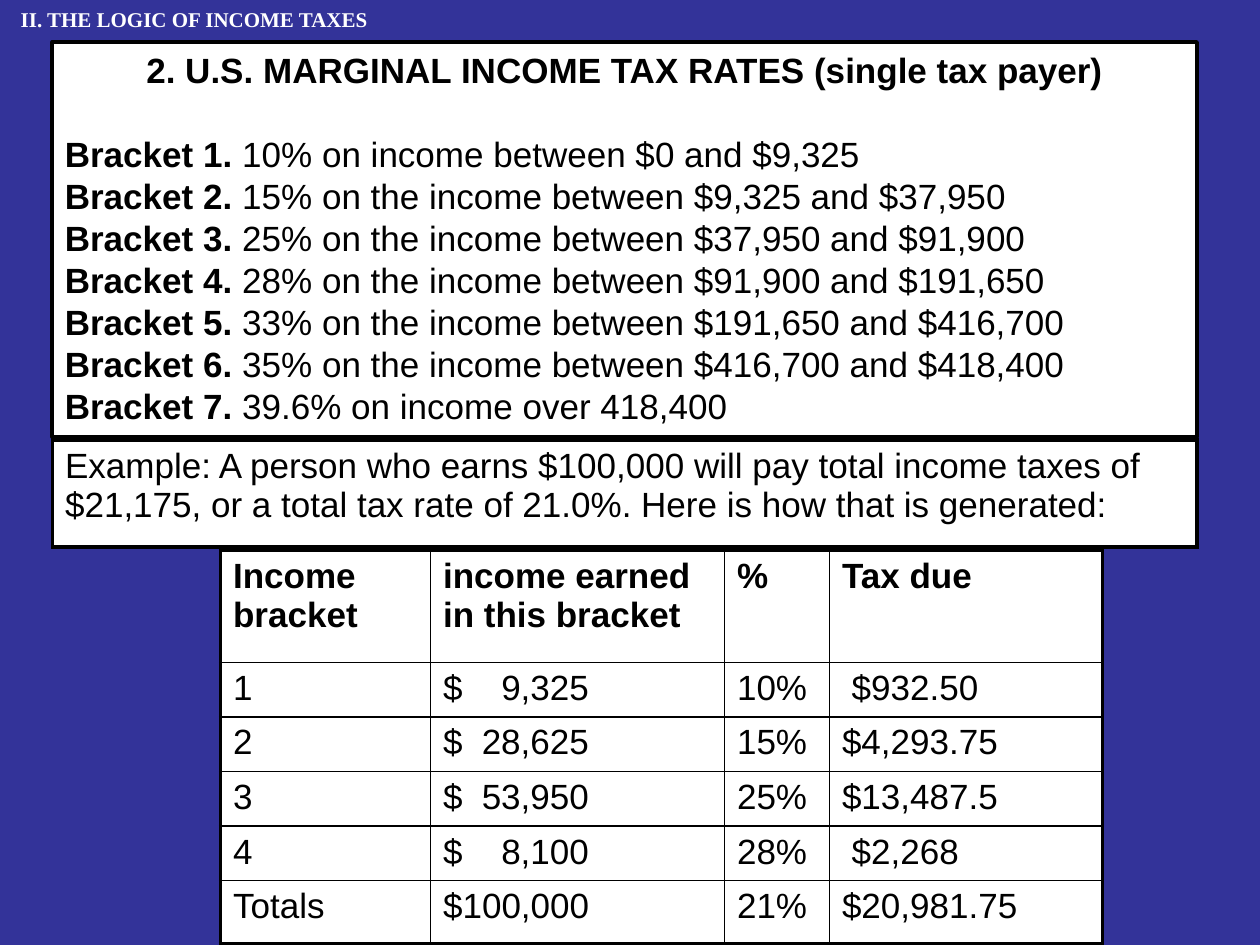
from dataclasses import dataclass
from lxml import etree
from pptx import Presentation
from pptx.dml.color import RGBColor
from pptx.enum.shapes import MSO_SHAPE
from pptx.enum.text import MSO_ANCHOR, PP_ALIGN
from pptx.oxml.ns import qn
from pptx.util import Pt

RECT = MSO_SHAPE.RECTANGLE
TOP = MSO_ANCHOR.TOP
LEFT, CENTER = PP_ALIGN.LEFT, PP_ALIGN.CENTER


@dataclass(frozen=True)
class Theme:
    back: str = "333399"
    paper: str = "FFFFFF"
    ink: str = "000000"
    sans: str = "Arial"
    serif: str = "Times New Roman"
    body: float = 20
    small: float = 12
    thick: float = 2.25
    thin: float = 1


THEME = Theme()


def rgb(code):
    return RGBColor.from_string(code)


def write(frame, lines, size=THEME.body, font=THEME.sans, color=THEME.ink,
          bold=False, align=LEFT, pitch=None, tab=None):
    frame.word_wrap = True
    for i, line in enumerate(lines):
        para = frame.paragraphs[0] if i == 0 else frame.add_paragraph()
        para.alignment = align
        if pitch:
            para.line_spacing = Pt(pitch)
        if tab:
            stops = etree.SubElement(para._p.get_or_add_pPr(), qn("a:tabLst"))
            etree.SubElement(stops, qn("a:tab"), pos=str(Pt(tab)), algn="r")
        runs = [(line, bold)] if isinstance(line, str) else line
        for words, heavy in runs:
            run = para.add_run()
            run.text = words
            run.font.size = Pt(size)
            run.font.name = font
            run.font.bold = heavy
            run.font.color.rgb = rgb(color)


class Deck:
    def __init__(self, theme):
        self.theme = theme
        self.show = Presentation()
        self.show.slide_width, self.show.slide_height = Pt(720), Pt(540)
        self.slide = self.show.slides.add_slide(self.show.slide_layouts[6])
        fill = self.slide.background.fill
        fill.solid()
        fill.fore_color.rgb = rgb(theme.back)

    def text(self, area, lines, **style):
        box = self.slide.shapes.add_textbox(*map(Pt, area))
        write(box.text_frame, lines, **style)

    def panel(self, area, lines, **style):
        box = self.slide.shapes.add_shape(RECT, *map(Pt, area))
        box.shadow.inherit = False
        box.fill.solid()
        box.fill.fore_color.rgb = rgb(self.theme.paper)
        box.line.color.rgb = rgb(self.theme.ink)
        box.line.width = Pt(self.theme.thick)
        box.text_frame.vertical_anchor = TOP
        write(box.text_frame, lines, **style)
        return box.text_frame

    def edge(self, cell, side, width):
        line = etree.SubElement(cell._tc.get_or_add_tcPr(), qn("a:ln" + side),
                                w=str(Pt(width)))
        fill = etree.SubElement(line, qn("a:solidFill"))
        etree.SubElement(fill, qn("a:srgbClr"), val=self.theme.ink)

    def table(self, left, top, cols, rows, data, head=False, tab=None):
        shape = self.slide.shapes.add_table(
            len(rows), len(cols), Pt(left), Pt(top), Pt(sum(cols)), Pt(sum(rows)))
        grid = shape.table
        grid.first_row = grid.horz_banding = False
        for col, width in zip(grid.columns, cols):
            col.width = Pt(width)
        for row, height in zip(grid.rows, rows):
            row.height = Pt(height)
        for r, record in enumerate(data):
            for c, words in enumerate(record):
                cell = grid.cell(r, c)
                outer = {"L": c == 0, "R": c == len(cols) - 1,
                         "T": r == 0, "B": r == len(rows) - 1}
                for side, rim in outer.items():
                    self.edge(cell, side, self.theme.thick if rim else self.theme.thin)
                cell.fill.solid()
                cell.fill.fore_color.rgb = rgb(self.theme.paper)
                write(cell.text_frame, words.split("\n"), bold=head and r == 0,
                      tab=tab if "\t" in words else None)

    def save(self):
        self.show.save("out.pptx")


RATES = [
    "10% on income between $0 and $9,325",
    "15% on the income between $9,325 and $37,950",
    "25% on the income between $37,950 and $91,900",
    "28% on the income between $91,900 and $191,650",
    "33% on the income between $191,650 and $416,700",
    "35% on the income between $416,700 and $418,400",
    "39.6% on income over 418,400",
]
EXAMPLE = ("Example: A person who earns $100,000 will pay total income taxes of "
           "$21,175, or a total tax rate of 21.0%. Here is how that is generated:")
TAXES = [
    ("Income\nbracket", "income earned in this bracket", "%", "Tax due"),
    ("1", "$\t9,325", "10%", " $932.50"),
    ("2", "$\t28,625", "15%", "$4,293.75"),
    ("3", "$\t53,950", "25%", "$13,487.5"),
    ("4", "$\t8,100", "28%", " $2,268"),
    ("Totals", "$100,000", "21%", "$20,981.75"),
]


def main():
    deck = Deck(THEME)
    title = [("2. U.S. MARGINAL INCOME TAX RATES (single tax payer)", True)]
    rates = [[(f"Bracket {n}. ", True), (rate, False)]
             for n, rate in enumerate(RATES, 1)]
    frame = deck.panel((30, 24, 654, 225.5), [title] + rates, pitch=24)
    head = frame.paragraphs[0]
    head.alignment = CENTER
    head.space_after = Pt(24)
    deck.table(126, 314.5, [120, 168, 60, 156], [64] + [31.2] * 4 + [36],
               TAXES, head=True, tab=83.4)
    deck.table(30, 251.5, [654], [61], [[EXAMPLE]])
    deck.text((0, 0, 222, 21.6), ["II. THE LOGIC OF INCOME TAXES"],
              size=THEME.small, font=THEME.serif, color=THEME.paper,
              bold=True, align=CENTER)
    deck.save()


if __name__ == "__main__":
    main()
